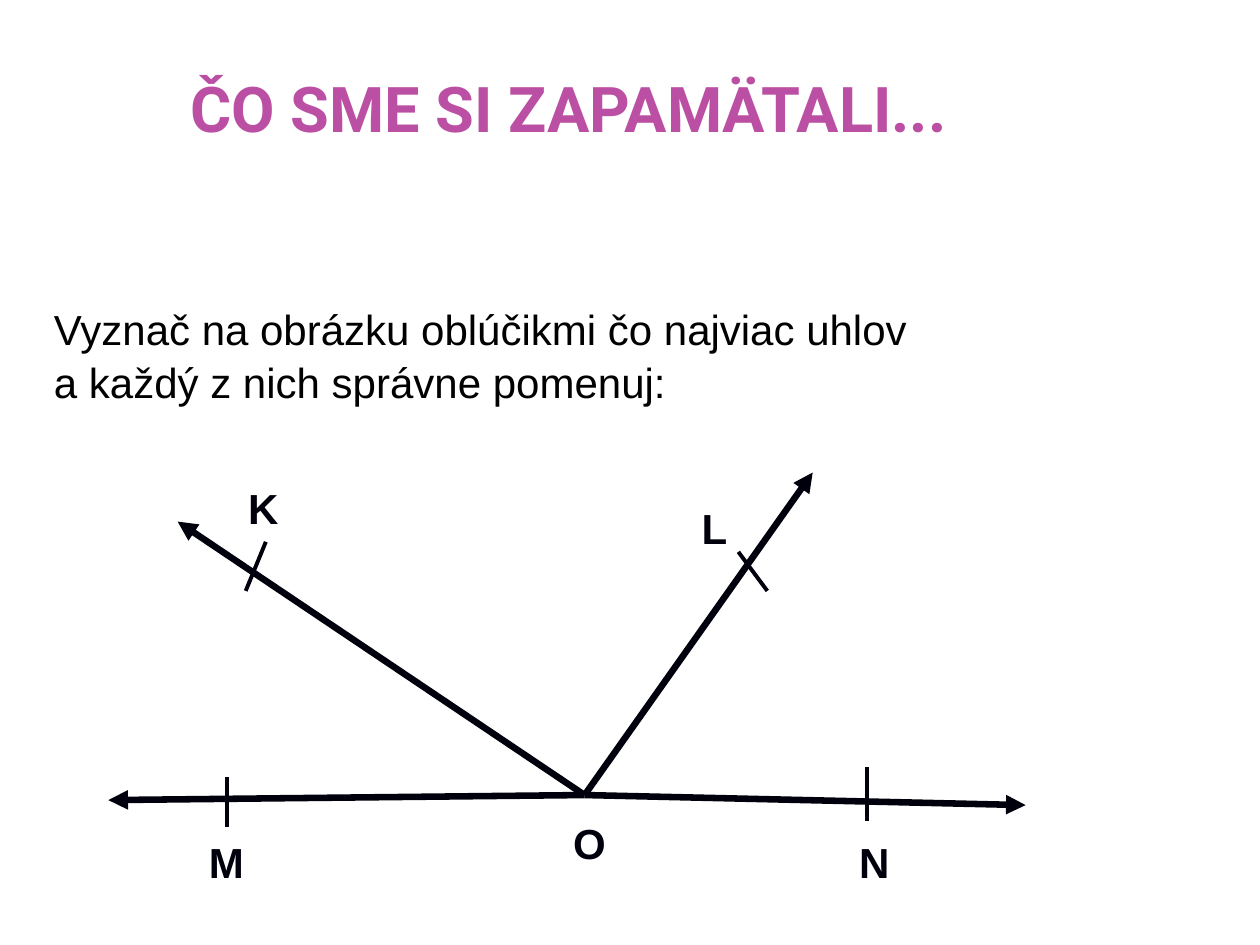
from typing import NamedTuple

from lxml.etree import SubElement
from pptx import Presentation
from pptx.dml.color import RGBColor
from pptx.enum.shapes import MSO_CONNECTOR
from pptx.enum.text import PP_ALIGN
from pptx.oxml.ns import qn
from pptx.slide import Slide
from pptx.util import Inches, Pt

COLORS = {"ink": "00000C", "body": "000000", "title": "BB4FA3"}
FORMATS = {
    "label": {"size": Pt(24), "name": "Arial", "bold": True},
    "body": {"size": Pt(24), "name": "Arial", "bold": False},
    "title": {"size": Pt(36), "name": "Roboto", "bold": True},
}
VERTEX = (4.64, 6.31)


class Segment(NamedTuple):
    start: tuple[float, float]
    end: tuple[float, float]
    width: float = 2.25
    arrow: bool = False


class TextItem(NamedTuple):
    lines: tuple[str, ...]
    box: tuple[float, float, float, float]
    style: str = "label"
    color: str = "ink"
    alignment: PP_ALIGN = PP_ALIGN.LEFT
    wrap: bool = False
    top_margin: float = 0.08
    paragraph_gap: float = 1.5


RAY_ENDS = [(8.14, 6.39), (0.86, 6.35), (6.45, 3.75), (1.41, 4.14)]
RAYS = [Segment(VERTEX, end, 3.75, True) for end in RAY_ENDS]
TICKS = [
    Segment((1.8, 6.17), (1.8, 6.56)),
    Segment((2.11, 4.3), (1.95, 4.69)),
    Segment((5.86, 4.38), (6.09, 4.69)),
    Segment((6.88, 6.09), (6.88, 6.52)),
]
TEXTS = [
    TextItem(("K",), (1.87, 3.75, 0.45, 0.5)),
    TextItem(("L",), (5.47, 3.91, 0.41, 0.5)),
    TextItem(("O",), (4.45, 6.41, 0.46, 0.5)),
    TextItem(("N",), (6.72, 6.56, 0.45, 0.5)),
    TextItem(("M",), (1.56, 6.56, 0.48, 0.5)),
    TextItem(
        ("Vyznač na obrázku oblúčikmi čo najviac uhlov", "a každý z nich správne pomenuj:"),
        (0.33, 2.33, 9.06, 0.91), "body", "body", wrap=True,
    ),
    TextItem(
        ("ČO SME SI ZAPAMÄTALI...",), (0.33, 0.5, 8.37, 0.92),
        "title", "title", PP_ALIGN.CENTER, True, 0.05,
    ),
]


def draw_segment(slide: Slide, segment: Segment) -> None:
    points = [Inches(value) for value in (*segment.start, *segment.end)]
    connector = slide.shapes.add_connector(MSO_CONNECTOR.STRAIGHT, *points)
    connector.line.color.rgb = RGBColor.from_string(COLORS["ink"])
    connector.line.width = Pt(segment.width)
    properties = connector._element.spPr
    if segment.arrow:
        SubElement(properties.find(qn("a:ln")), qn("a:tailEnd"), type="triangle")
    SubElement(properties, qn("a:effectLst"))


def draw_text(slide: Slide, item: TextItem) -> None:
    shape = slide.shapes.add_textbox(*(Inches(value) for value in item.box))
    frame = shape.text_frame
    frame.word_wrap = item.wrap
    frame.margin_top = Inches(item.top_margin)
    frame.text = "\n".join(item.lines)
    for index, paragraph in enumerate(frame.paragraphs):
        paragraph.alignment = item.alignment
        if index:
            paragraph.space_before = Pt(item.paragraph_gap)
        font = paragraph.runs[0].font
        for attribute, value in FORMATS[item.style].items():
            setattr(font, attribute, value)
        font.color.rgb = RGBColor.from_string(COLORS[item.color])


def main() -> None:
    """Build the slide about naming the angles between four rays."""
    presentation = Presentation()
    presentation.slide_width = Inches(10)
    presentation.slide_height = Inches(7.5)
    slide = presentation.slides.add_slide(presentation.slide_layouts[6])
    for segment in RAYS + TICKS:
        draw_segment(slide, segment)
    for item in TEXTS:
        draw_text(slide, item)
    presentation.save("out.pptx")


if __name__ == "__main__":
    main()
